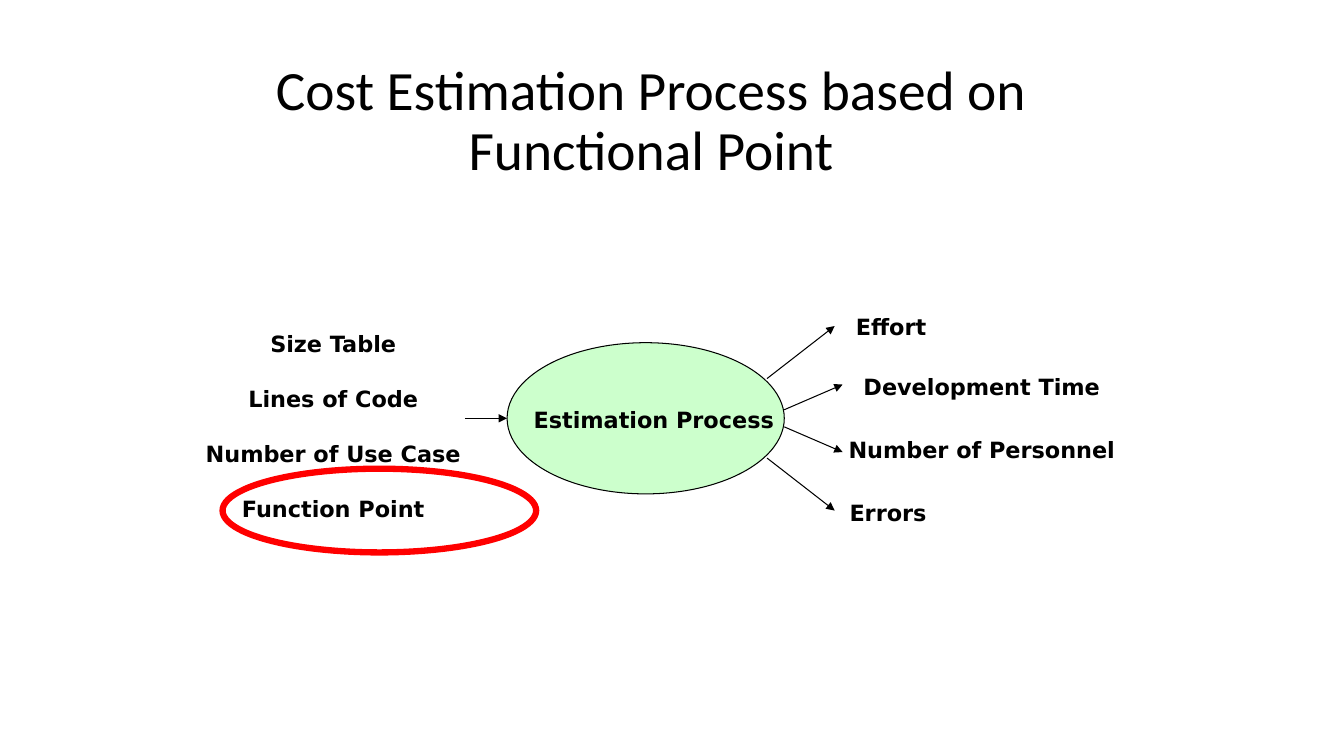
from pptx import Presentation
from pptx.dml.color import RGBColor
from pptx.enum import shapes, text
from pptx.oxml import ns
from pptx.util import Pt
from lxml import etree

BLACK = RGBColor(0x00, 0x00, 0x00)
PALE_GREEN = RGBColor(0xCC, 0xFF, 0xCC)
RED = RGBColor(0xFF, 0x00, 0x00)

TITLE = "Cost Estimation Process based on Functional Point"
PROCESS = "Estimation Process"
INPUTS = ["Size Table", "Lines of Code", "Number of Use Case", "Function Point"]
OUTPUTS = [  # label, left, top, width
    ("Effort", 596.2, 220.3, 80.6),
    ("Development Time", 593.3, 262.8, 216),
    ("Number of Personnel", 596.2, 308.2, 210.2),
    ("Errors", 594, 352.8, 80.6),
]
OUTPUT_ARROWS = [  # start x, start offset, end x, end offset from the centre line
    (547.9, 28.4, 596.2, 65.9),
    (560.2, 6.1, 601.9, 24.1),
]

LABEL_HEIGHT = 27
PROCESS_LEFT, PROCESS_TOP, PROCESS_WIDTH, PROCESS_HEIGHT = 362.2, 244.8, 198, 108
CENTRE_Y = PROCESS_TOP + PROCESS_HEIGHT / 2

presentation = Presentation()
presentation.slide_width, presentation.slide_height = Pt(960), Pt(540)
slide = presentation.slides.add_slide(presentation.slide_layouts[6])


def add_text(lines, left, top, width, height, size=16, font="DejaVu Sans",
             bold=True, gap=0, line_spacing=None, anchor=text.MSO_ANCHOR.TOP):
    """Add centred lines, one paragraph each, with gap points between them."""
    box = slide.shapes.add_textbox(Pt(left), Pt(top), Pt(width), Pt(height))
    frame = box.text_frame
    frame.word_wrap = True
    frame.vertical_anchor = anchor
    for index, line in enumerate(lines):
        paragraph = frame.add_paragraph() if index else frame.paragraphs[0]
        paragraph.alignment = text.PP_ALIGN.CENTER
        paragraph.line_spacing = line_spacing
        if index:
            paragraph.space_before = Pt(gap)
        run = paragraph.add_run()
        run.text = line
        run.font.name, run.font.size, run.font.bold = font, Pt(size), bold
        run.font.color.rgb = BLACK


def add_arrow(x1, y1, x2, y2):
    arrow = slide.shapes.add_connector(
        shapes.MSO_CONNECTOR.STRAIGHT, Pt(x1), Pt(y1), Pt(x2), Pt(y2))
    arrow.line.color.rgb, arrow.line.width = BLACK, Pt(0.75)
    etree.SubElement(arrow.line._get_or_add_ln(), ns.qn("a:tailEnd"), type="triangle")
    etree.SubElement(arrow._element.spPr, ns.qn("a:effectLst"))


def add_ellipse(left, top, width, height, line_color, line_width, fill=None):
    ellipse = slide.shapes.add_shape(
        shapes.MSO_SHAPE.OVAL, Pt(left), Pt(top), Pt(width), Pt(height))
    ellipse.shadow.inherit = False
    ellipse.line.color.rgb, ellipse.line.width = line_color, Pt(line_width)
    if fill is None:
        ellipse.fill.background()
    else:
        ellipse.fill.solid()
        ellipse.fill.fore_color.rgb = fill


add_text([TITLE], 159, 42.5, 612, 90, size=39.6, font="Calibri", bold=False,
         line_spacing=0.9, anchor=text.MSO_ANCHOR.MIDDLE)
add_text(INPUTS, 139, 232.6, 198, 138, gap=20)
for label, left, top, width in OUTPUTS:
    add_text([label], left, top, width, LABEL_HEIGHT)

add_arrow(332, CENTRE_Y, PROCESS_LEFT, CENTRE_Y)
add_ellipse(PROCESS_LEFT, PROCESS_TOP, PROCESS_WIDTH, PROCESS_HEIGHT,
            BLACK, 0.75, PALE_GREEN)
add_text([PROCESS], 368, 286.6, PROCESS_WIDTH, LABEL_HEIGHT)
for x1, start, x2, end in OUTPUT_ARROWS:
    for side in (-1, 1):
        add_arrow(x1, CENTRE_Y + side * start, x2, CENTRE_Y + side * end)

add_ellipse(159, 334.8, 224, 59.8, RED, 4.5)

presentation.save("out.pptx")
